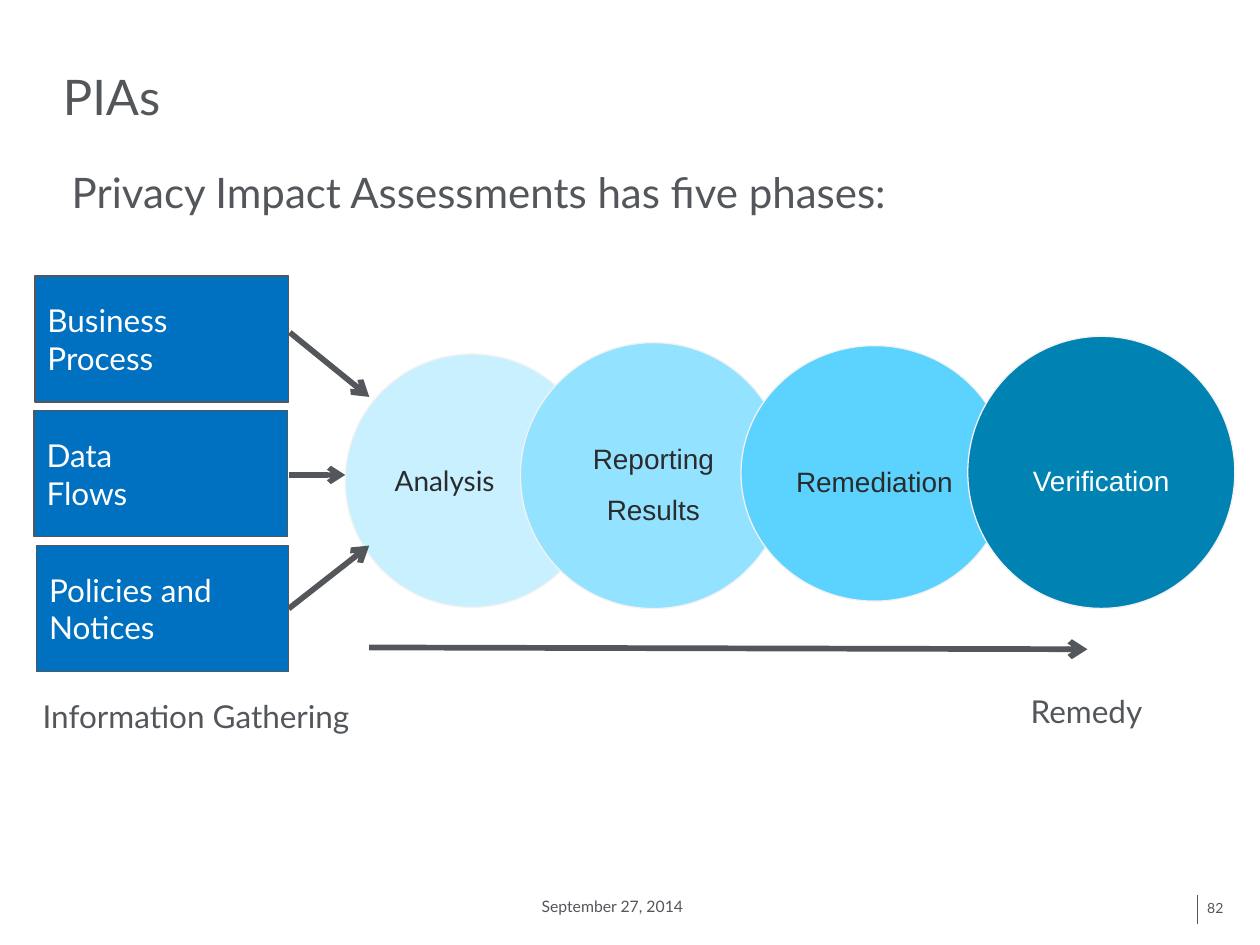
import pptx
import pptx.dml.color
import pptx.enum.shapes
import pptx.enum.text
import pptx.oxml
import pptx.oxml.ns
import pptx.util

Pt = pptx.util.Pt
Shape = pptx.enum.shapes.MSO_SHAPE
Anchor = pptx.enum.text.MSO_ANCHOR
Align = pptx.enum.text.PP_ALIGN
GRAY, DARK, WHITE = "53565A", "2A2B2D", "FFFFFF"


def rgb(value):
    return pptx.dml.color.RGBColor.from_string(value)


def write(box, text, size=18, color=GRAY, font="Lato", anchor=Anchor.TOP,
          align=Align.LEFT, spacing=1.0, insets=(7.2, 3.6, 7.2, 3.6)):
    frame = box.text_frame
    frame.word_wrap = True
    frame.vertical_anchor = anchor
    frame.margin_left, frame.margin_top, frame.margin_right, frame.margin_bottom = map(Pt, insets)
    frame.text = text
    for para in frame.paragraphs:
        para.alignment = align
        para.line_spacing = spacing
        for span in para.runs:
            span.font.name = font
            span.font.size = Pt(size)
            span.font.color.rgb = rgb(color)


deck = pptx.Presentation()
deck.slide_width, deck.slide_height = Pt(720), Pt(540)
page = deck.slides.add_slide(deck.slide_layouts[6])

flush = {"spacing": 0.9, "insets": (0, 0, 0, 0)}
labels = [
    ("PIAs", (36, 14.4, 648, 57.6), {"size": 28, "anchor": Anchor.BOTTOM, **flush}),
    ("Privacy Impact Assessments has five phases:", (41, 98.6, 654.5, 371.5), {"size": 24, **flush}),
    ("Information Gathering", (17.3, 394.6, 231, 28.8), {}),
    ("Remedy", (581.8, 391.7, 138.2, 36), {}),
    ("September 27, 2014", (302.4, 509, 127.4, 17.3), {"size": 9}),
    ("82", (689.8, 511.2, 18, 16.6), {"size": 8, "anchor": Anchor.MIDDLE, **flush}),
]
for text, place, style in labels:
    write(page.shapes.add_textbox(*map(Pt, place)), text, **style)

source_style = {"color": WHITE, "anchor": Anchor.MIDDLE}
sources = [("Business Process", 20, 144.7), ("Data\nFlows", 19.5, 144.7),
           ("Policies and Notices", 21, 144)]
shapes = [(Shape.RECTANGLE, text, (left, 157.7 + 77 * row, width, 72), "0070C0", GRAY, source_style)
          for row, (text, left, width) in enumerate(sources)]

phase_style = {"size": 16, "color": DARK, "anchor": Anchor.MIDDLE}
wide_style = {**phase_style, "font": "Arial", "align": Align.CENTER, "spacing": 1.5}
phases = [
    ("Analysis", (197.3, 202.3, 144.7, 144.7), "C9F0FF", phase_style),
    ("Reporting Results", (297.4, 195.8, 152, 152), "93E2FF", wide_style),
    ("Remediation", (423.4, 197.5, 152.6, 146), "5CD3FF", wide_style),
    ("Verification", (553, 192.2, 152.6, 155.5), "0083B3", {**wide_style, "color": WHITE}),
]
shapes += [(Shape.OVAL, text, place, fill, "F2F2F2", style) for text, place, fill, style in phases]

for kind, text, place, fill, outline, style in shapes:
    box = page.shapes.add_shape(kind, *map(Pt, place))
    box.shadow.inherit = False
    box.fill.solid()
    box.fill.fore_color.rgb = rgb(fill)
    box.line.color.rgb = rgb(outline)
    box.line.width = Pt(0.75)
    write(box, text, **style)

lines = [
    ((165.6, 190, 211, 226.8), 3.25, True),
    ((165, 271.4, 197.3, 271.4), 3, True),
    ((165, 347.8, 211, 311.8), 3.25, True),
    ((211, 370, 621.4, 371), 3.25, True),
    ((684, 511.2, 684, 527.8), 0.5, False),
]
for ends, width, arrow in lines:
    line = page.shapes.add_connector(pptx.enum.shapes.MSO_CONNECTOR.STRAIGHT, *map(Pt, ends))
    line.line.color.rgb = rgb(GRAY)
    line.line.width = Pt(width)
    properties = line._element.spPr
    if arrow:
        head = pptx.oxml.parse_xml(f'<a:tailEnd {pptx.oxml.ns.nsdecls("a")} type="arrow"/>')
        properties.find(pptx.oxml.ns.qn("a:ln")).append(head)
    properties.append(pptx.oxml.parse_xml(f'<a:effectLst {pptx.oxml.ns.nsdecls("a")}/>'))

deck.save("out.pptx")
